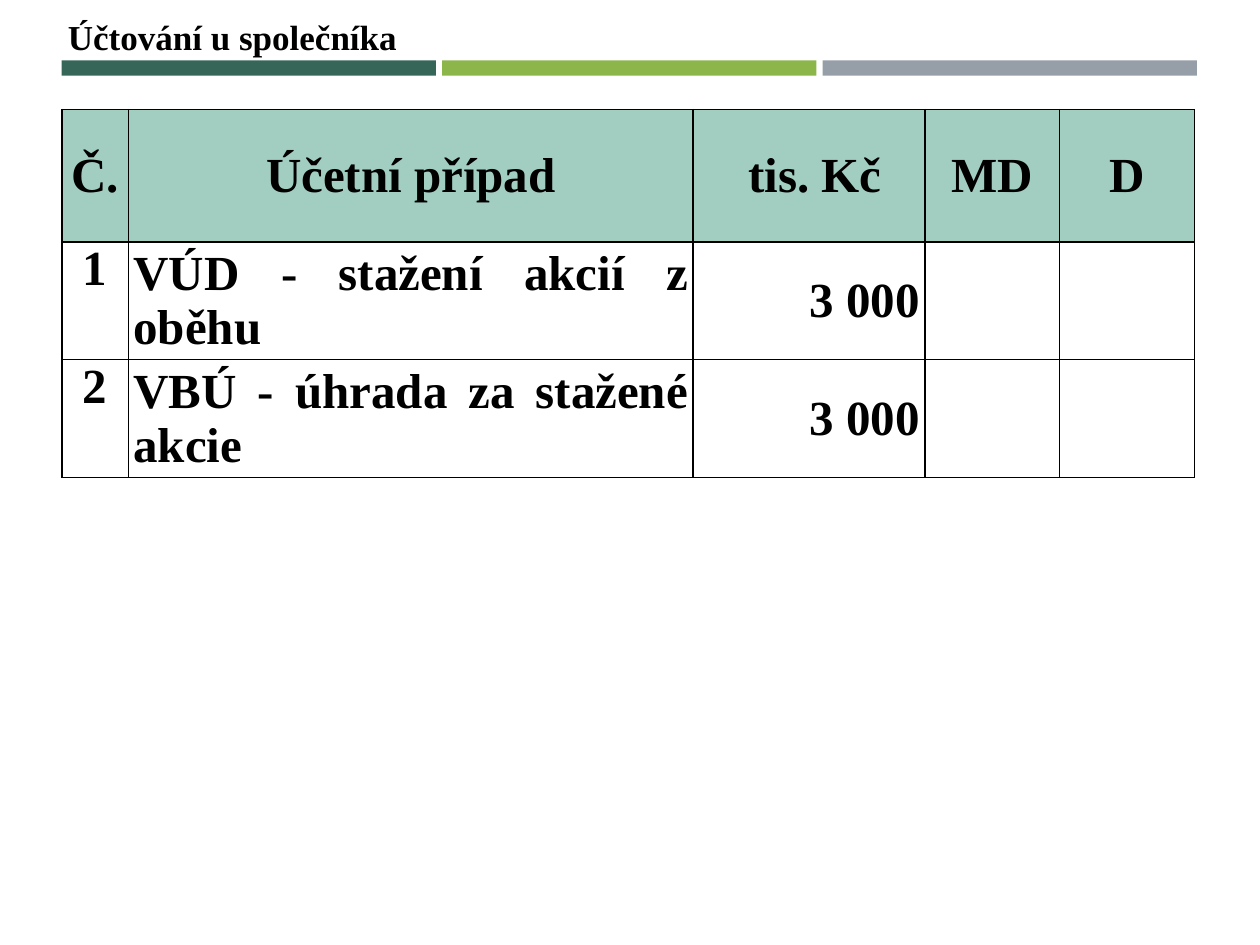
import dataclasses

import lxml.etree
import pptx
import pptx.dml.color
import pptx.enum.shapes
import pptx.enum.text
import pptx.oxml.ns
import pptx.util

Inches = pptx.util.Inches
Pt = pptx.util.Pt
ALIGN = pptx.enum.text.PP_ALIGN
ANCHOR = pptx.enum.text.MSO_ANCHOR

FONT = "Times New Roman"
BLACK = "000000"
HEADER_FILL = "A2CEC1"
CELL_FORMAT = {
    "margin_left": Inches(0.04),
    "margin_right": Inches(0.04),
    "margin_top": 0,
    "margin_bottom": 0,
}


@dataclasses.dataclass
class Column:
    heading: str
    width: float
    align: ALIGN
    anchor: ANCHOR = ANCHOR.MIDDLE


COLUMNS = [
    Column("Č.", 0.53, ALIGN.CENTER, ANCHOR.TOP),
    Column("Účetní případ", 4.48, ALIGN.JUSTIFY),
    Column(" tis. Kč", 1.84, ALIGN.RIGHT),
    Column("MD", 1.07, ALIGN.CENTER),
    Column("D", 1.07, ALIGN.CENTER),
]
ENTRIES = [
    ("1", "VÚD - stažení akcií z oběhu", "3 000", "", ""),
    ("2", "VBÚ - úhrada za stažené akcie", "3 000", "", ""),
]
HEADER_HEIGHT, ENTRY_HEIGHT = 1.05, 0.93


def color(value: str) -> pptx.dml.color.RGBColor:
    return pptx.dml.color.RGBColor.from_string(value)


def apply_format(target, values: dict) -> None:
    for name, value in values.items():
        setattr(target, name, value)


def write(paragraph, words: str, size: float) -> None:
    run = paragraph.add_run()
    run.text = words
    apply_format(run.font, {"name": FONT, "size": Pt(size), "bold": True})
    run.font.color.rgb = color(BLACK)


def draw_bar(slide, left: float, width: float, fill: str) -> None:
    bar = slide.shapes.add_shape(
        pptx.enum.shapes.MSO_SHAPE.RECTANGLE,
        Inches(left), Inches(0.48), Inches(width), Inches(0.12),
    )
    bar.shadow.inherit = False
    bar.fill.solid()
    bar.fill.fore_color.rgb = color(fill)
    bar.line.fill.background()


def draw_borders(cell) -> None:
    properties = cell._tc.get_or_add_tcPr()
    qn = pptx.oxml.ns.qn
    for position, side in enumerate(("a:lnL", "a:lnR", "a:lnT", "a:lnB")):
        line = lxml.etree.Element(qn(side), w=str(Pt(1)))
        fill = lxml.etree.SubElement(line, qn("a:solidFill"))
        lxml.etree.SubElement(fill, qn("a:srgbClr"), val=BLACK)
        properties.insert(position, line)


def fill_cell(cell, words: str, column: Column, is_header: bool) -> None:
    if is_header:
        cell.fill.solid()
        cell.fill.fore_color.rgb = color(HEADER_FILL)
    else:
        cell.fill.background()
    if words:
        apply_format(cell, CELL_FORMAT)
        cell.vertical_anchor = ANCHOR.MIDDLE if is_header else column.anchor
        paragraph = cell.text_frame.paragraphs[0]
        paragraph.alignment = ALIGN.CENTER if is_header else column.align
        write(paragraph, words, 28)
    draw_borders(cell)


def draw_ledger(slide) -> None:
    rows = [[column.heading for column in COLUMNS], *ENTRIES]
    heights = [HEADER_HEIGHT] + [ENTRY_HEIGHT] * len(ENTRIES)
    ledger = slide.shapes.add_table(
        len(rows), len(COLUMNS), Inches(0.49), Inches(0.87),
        Inches(sum(column.width for column in COLUMNS)), Inches(sum(heights)),
    ).table
    for ledger_column, column in zip(ledger.columns, COLUMNS):
        ledger_column.width = Inches(column.width)
    for r, (height, row) in enumerate(zip(heights, rows)):
        ledger.rows[r].height = Inches(height)
        for c, (column, words) in enumerate(zip(COLUMNS, row)):
            fill_cell(ledger.cell(r, c), words, column, is_header=r == 0)


def main() -> None:
    deck = pptx.Presentation()
    deck.slide_width, deck.slide_height = Inches(10), Inches(7.5)
    slide = deck.slides.add_slide(deck.slide_layouts[6])

    # Three-colour band
    bar_width, bar_pitch = 2.97, 3.02
    for i, fill in enumerate(("366658", "8CB64A", "969FA7")):
        draw_bar(slide, 0.49 + i * bar_pitch, bar_width, fill)

    # Heading
    heading = slide.shapes.add_textbox(
        Inches(0.44), Inches(0.07), Inches(2.83), Inches(0.44)
    ).text_frame
    apply_format(heading, {
        "word_wrap": False,
        "auto_size": pptx.enum.text.MSO_AUTO_SIZE.SHAPE_TO_FIT_TEXT,
    })
    write(heading.paragraphs[0], "Účtování u společníka", 20)

    # Accounting entries
    draw_ledger(slide)

    deck.save("out.pptx")


if __name__ == "__main__":
    main()
